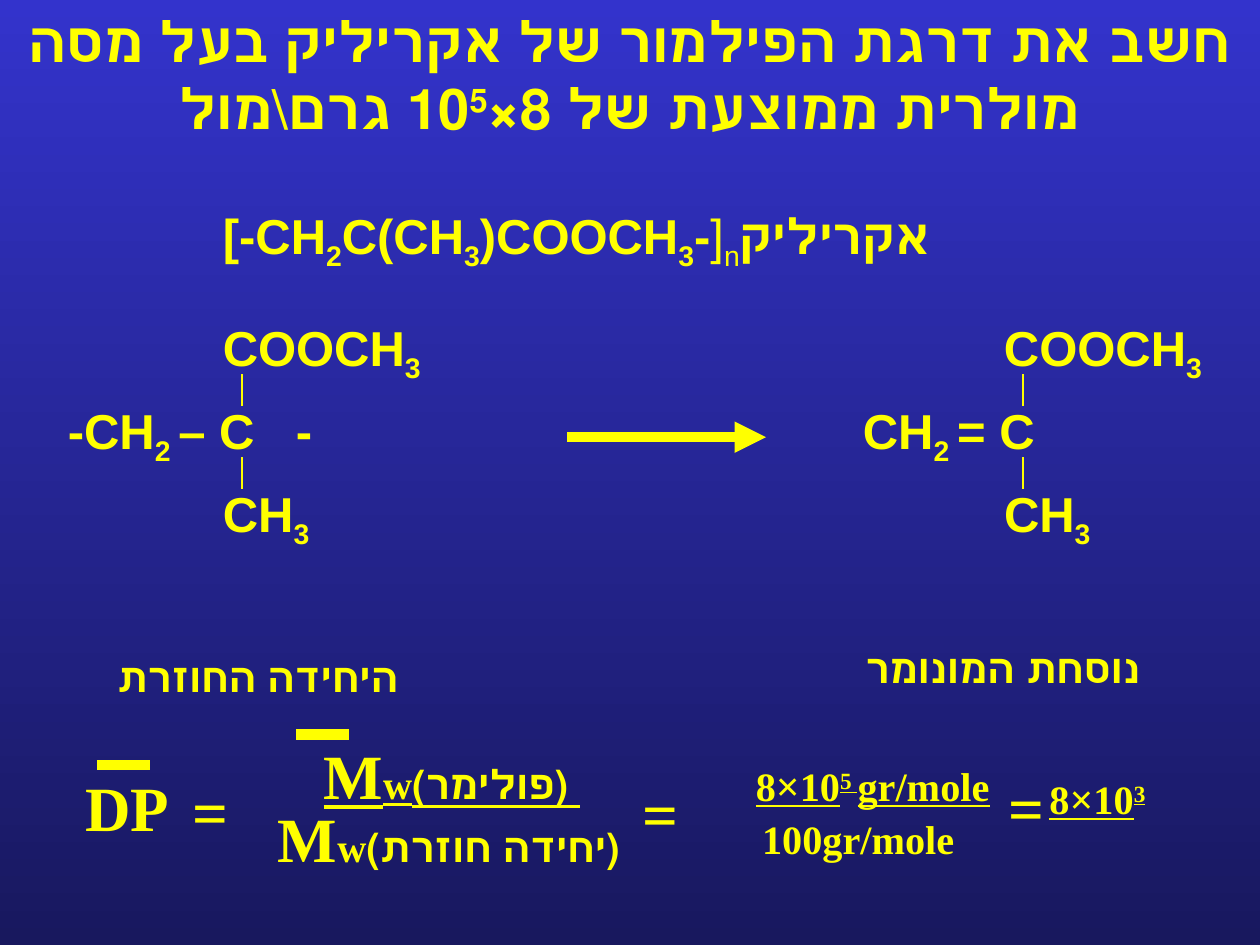
from pptx import Presentation
from pptx.dml.color import RGBColor
from pptx.enum.shapes import MSO_CONNECTOR
from pptx.enum.text import MSO_AUTO_SIZE, PP_ALIGN
from pptx.oxml.ns import qn
from pptx.util import Inches, Pt
from lxml.etree import SubElement

YELLOW = RGBColor(0xFF, 0xFF, 0x00)
BLUE = RGBColor(0x33, 0x33, 0xCC)
NAVY = RGBColor(0x18, 0x18, 0x5E)
WIDTH, HEIGHT = 10, 7.5

SERIF = {"name": "Times New Roman", "bold": True, "size": 23}
TITLE = {**SERIF, "size": 32}
LARGE = {**SERIF, "size": 36}
SANS = {"name": "Arial", "bold": True, "size": 28}
SUB, SUP = {"baseline": -25}, {"baseline": 30}
UNDER = {"underline": True}
TIMES_SIGN = ("×", {"size": 24, **UNDER})
LEFT = {}
CENTER = {"align": PP_ALIGN.CENTER, "wrap": True}
RTL = {"align": PP_ALIGN.RIGHT, "rtl": True}
RTL_CENTER = {**CENTER, "rtl": True}

# (left, top, width, height), base font, paragraph format, runs of (text, changes)
TEXTS = [
    ((0, 0, WIDTH, 1.17), TITLE, RTL_CENTER,
     [("חשב את דרגת הפילמור של אקריליק בעל מסה מולרית ממוצעת של 8×10", {}),
      ("5", SUP), (" גרם\\מול", {})]),
    ((1.67, 1.58, 6.02, 0.57), SANS, LEFT,
     [("[-CH", {}), ("2", SUB), ("C(CH", {}), ("3", SUB), (")COOCH", {}),
      ("3", SUB), ("-", {}), ("]", {"bold": False}),
      ("n", {"bold": False, **SUB}), ("אקריליק", {})]),
    ((0.83, 5.13, 3.08, 0.48), SERIF, {"wrap": True}, [("היחידה החוזרת", {})]),
    ((6.42, 5.06, 3.08, 0.48), SERIF, CENTER, [("נוסחת המונומר", {})]),
    ((0.58, 6.05, 0.87, 0.7), LARGE, LEFT, [("DP", {})]),
    ((1.43, 6.08, 0.51, 0.7), LARGE, LEFT, [("=", {})]),
    ((2.18, 5.8, 2.52, 0.7), SERIF, RTL,
     [(" (פולימר)", UNDER), ("M", {"size": 36, **UNDER}), ("w", UNDER)]),
    ((1.84, 6.3, 3.18, 0.7), SERIF, RTL,
     [("(יחידה חוזרת)", {}), ("M", {"size": 36}), ("w", {})]),
    ((5, 6.1, 0.51, 0.7), LARGE, LEFT, [("=", {})]),
    ((5.9, 5.98, 2.07, 0.5), SERIF, LEFT,
     [("8", UNDER), TIMES_SIGN, ("10", UNDER), ("5 ", {**UNDER, **SUP}),
      ("gr/mole", UNDER)]),
    ((5.95, 6.41, 1.73, 0.48), SERIF, LEFT, [("100gr/mole", {})]),
    ((7.88, 6.05, 0.51, 0.7), LARGE, {"align": PP_ALIGN.RIGHT}, [("=", {})]),
    ((8.23, 6.08, 0.98, 0.51), SERIF, LEFT,
     [("8", UNDER), TIMES_SIGN, ("10", UNDER), ("3", {**UNDER, **SUP})]),
]

# Carbon column left, main chain left, main chain runs, tab stop in the chain
MOLECULES = [
    (1.67, 0.44, [("-CH", {}), ("2 ", SUB), ("– C\t-", {})], 1.81),
    (7.87, 6.75, [("CH", {}), ("2 ", SUB), ("= C", {})], None),
]
MOLECULE_TOP, MOLECULE_PITCH, ROW_HEIGHT = 2.47, 0.66, 0.57
BOND_OFFSET, BOND_DROP, BOND_LENGTH = 0.25, 0.5, 0.25

REACTION_ARROW = (4.5, 3.47, 1.58)
AVERAGE_BARS = [(0.77, 6.07, 0.42), (2.35, 5.83, 0.42)]


def add_text(slide, box, base, layout, runs):
    frame = slide.shapes.add_textbox(*map(Inches, box)).text_frame
    frame.word_wrap = layout.get("wrap", False)
    frame.auto_size = MSO_AUTO_SIZE.SHAPE_TO_FIT_TEXT
    paragraph = frame.paragraphs[0]
    paragraph.alignment = layout.get("align", PP_ALIGN.LEFT)
    properties = paragraph._p.get_or_add_pPr()
    if layout.get("rtl"):
        properties.set("rtl", "1")
    if layout.get("tab"):
        stops = SubElement(properties, qn("a:tabLst"))
        SubElement(stops, qn("a:tab"), pos=str(Inches(layout["tab"])), algn="l")
    for words, changes in runs:
        run = paragraph.add_run()
        run.text = words
        style = {**base, **changes}
        baseline = style.pop("baseline", None)
        style["size"] = Pt(style["size"])
        for attribute, value in style.items():
            setattr(run.font, attribute, value)
        run.font.color.rgb = YELLOW
        if baseline:
            run.font._element.set("baseline", str(baseline * 1000))


def add_line(slide, left, top, across=0, down=0, weight=6, arrow=False):
    ends = map(Inches, (left, top, left + across, top + down))
    line = slide.shapes.add_connector(MSO_CONNECTOR.STRAIGHT, *ends)
    line.line.color.rgb = YELLOW
    line.line.width = Pt(weight)
    if arrow:
        SubElement(line.line._get_or_add_ln(), qn("a:tailEnd"), type="triangle")
    SubElement(line._element.spPr, qn("a:effectLst"))


def add_molecule(slide, carbon_left, chain_left, chain, tab):
    rows = [
        (carbon_left, 1.8, [("COOCH", {}), ("3", SUB)], LEFT),
        (chain_left, 2.33, chain, {"wrap": True, "tab": tab}),
        (carbon_left, 0.98, [("CH", {}), ("3", SUB)], LEFT),
    ]
    for index, (left, width, runs, layout) in enumerate(rows):
        top = MOLECULE_TOP + index * MOLECULE_PITCH
        add_text(slide, (left, top, width, ROW_HEIGHT), SANS, layout, runs)
        if index < len(rows) - 1:
            add_line(slide, carbon_left + BOND_OFFSET, top + BOND_DROP,
                     down=BOND_LENGTH, weight=0.75)


def main():
    deck = Presentation()
    deck.slide_width, deck.slide_height = Inches(WIDTH), Inches(HEIGHT)
    slide = deck.slides.add_slide(deck.slide_layouts[6])
    fill = slide.background.fill
    fill.gradient()
    fill.gradient_angle = 270
    for stop, color, position in zip(fill.gradient_stops, (BLUE, NAVY), (0, 1)):
        stop.color.rgb = color
        stop.position = position
    for text in TEXTS:
        add_text(slide, *text)
    for molecule in MOLECULES:
        add_molecule(slide, *molecule)
    add_line(slide, *REACTION_ARROW, arrow=True)
    for bar in AVERAGE_BARS:
        add_line(slide, *bar)
    deck.save("out.pptx")


if __name__ == "__main__":
    main()
